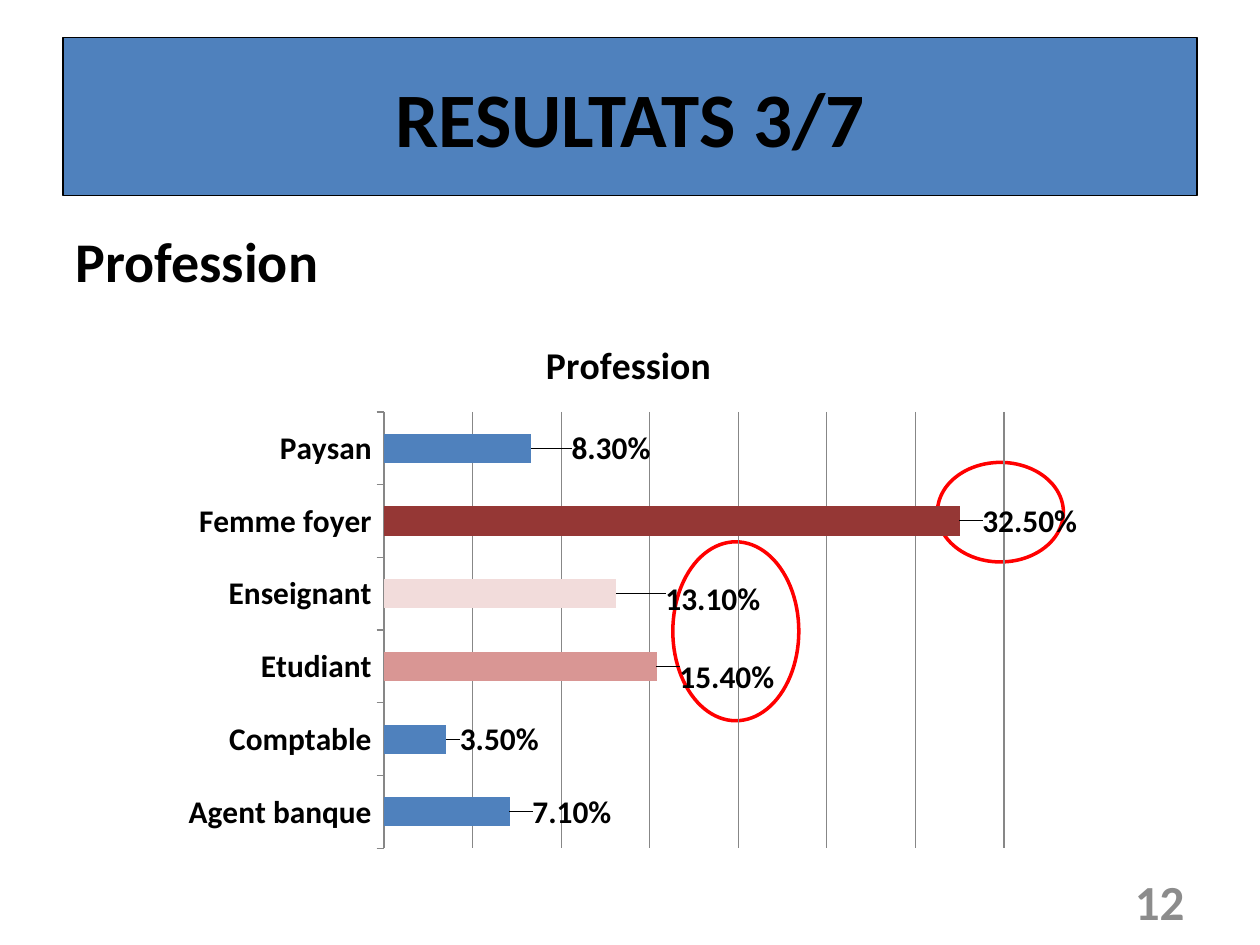
from lxml.etree import SubElement
from pptx import Presentation
from pptx.chart.data import CategoryChartData
from pptx.dml.color import RGBColor
from pptx.enum.chart import XL_CHART_TYPE, XL_LABEL_POSITION, XL_TICK_LABEL_POSITION, XL_TICK_MARK
from pptx.enum.shapes import MSO_SHAPE
from pptx.enum.text import MSO_ANCHOR, PP_ALIGN
from pptx.oxml import parse_xml
from pptx.oxml.ns import nsdecls, qn
from pptx.util import Inches, Pt

WIDE, HIGH = 10, 7.5
FACE = "Calibri"
BLACK = RGBColor(0x00, 0x00, 0x00)
WHITE = RGBColor(0xFF, 0xFF, 0xFF)
BLUE = RGBColor(0x4F, 0x81, 0xBD)
RED = RGBColor(0xFF, 0x00, 0x00)
GRAY = RGBColor(0x8C, 0x8C, 0x8C)
RULE = RGBColor(0x87, 0x87, 0x87)
ROSE = RGBColor(0xD9, 0x96, 0x94)
PALE = RGBColor(0xF2, 0xDC, 0xDB)
WINE = RGBColor(0x95, 0x37, 0x35)

# Job, share, bar colour, label shift as shares of the chart
JOBS = [
    ("Agent banque", 0.071, BLUE, 0.02, 0),
    ("Comptable", 0.035, BLUE, 0.01, 0),
    ("Etudiant", 0.154, ROSE, 0.02, 0.02),
    ("Enseignant", 0.131, PALE, 0.05, 0.01),
    ("Femme foyer", 0.325, WINE, 0.02, 0),
    ("Paysan", 0.083, BLUE, 0.04, 0),
]


def style(font, size, color=BLACK):
    font.name, font.size, font.bold = FACE, Pt(size), True
    font.color.rgb = color


def place(shape, box):
    shape.left, shape.top, shape.width, shape.height = map(Inches, box)


def write(frame, text, size, color, align, anchor):
    frame.text = text
    frame.word_wrap = True
    frame.vertical_anchor = anchor
    line = frame.paragraphs[0]
    line.alignment = align
    style(line.font, size, color)


def add_ring(slide, box):
    ring = slide.shapes.add_shape(MSO_SHAPE.OVAL, *map(Inches, box))
    ring.shadow.inherit = False
    ring.fill.solid()
    ring.fill.fore_color.rgb = WHITE
    ring.line.color.rgb = RED
    ring.line.width = Pt(2)
    # Rings lie behind the title
    slide.shapes.title.element.addprevious(ring.element)


def add_title(slide, box):
    title = slide.shapes.title
    place(title, box)
    title.fill.solid()
    title.fill.fore_color.rgb = BLUE
    title.line.color.rgb = BLACK
    title.line.width = Pt(0.75)
    write(title.text_frame, "RESULTATS 3/7", 44, BLACK, PP_ALIGN.CENTER, MSO_ANCHOR.MIDDLE)


def add_text(slide, box, text, size, color, align, anchor):
    area = slide.shapes.add_textbox(*map(Inches, box))
    write(area.text_frame, text, size, color, align, anchor)


def set_layout(node, **parts):
    inner = SubElement(node, qn("c:manualLayout"))
    for key, val in parts.items():
        SubElement(inner, qn("c:" + key)).set("val", str(val))


def add_chart(slide, box):
    data = CategoryChartData(number_format="0.00%")
    data.categories = [job[0] for job in JOBS]
    data.add_series("Profession", [job[1] for job in JOBS])
    chart = slide.shapes.add_chart(XL_CHART_TYPE.BAR_CLUSTERED, *map(Inches, box), data).chart
    chart.has_legend = False
    chart.font.name, chart.font.size = FACE, Pt(18)
    chart.font.color.rgb = BLACK
    chart.has_title = True
    head = chart.chart_title.text_frame
    head.text = "Profession"
    style(head.paragraphs[0].font, 21.6)

    # Axes
    cats, vals = chart.category_axis, chart.value_axis
    style(cats.tick_labels.font, 18)
    cats.major_tick_mark = XL_TICK_MARK.OUTSIDE
    cats.tick_label_position = XL_TICK_LABEL_POSITION.NEXT_TO_AXIS
    cats.format.line.color.rgb = RULE
    vals.minimum_scale, vals.maximum_scale, vals.major_unit = 0, 0.35, 0.05
    vals.has_major_gridlines = True
    vals.major_gridlines.format.line.color.rgb = RULE
    vals.visible = False

    # Bars and their shifted labels
    plot = chart.plots[0]
    plot.gap_width = 150
    plot.vary_by_categories = False
    plot.has_data_labels = True
    tags = plot.data_labels
    tags.show_value = True
    tags.number_format, tags.number_format_is_linked = "0.00%", False
    style(tags.font, 18)
    bars = plot.series[0]
    bars.format.fill.solid()
    bars.format.fill.fore_color.rgb = BLUE
    for i, (_, _, color, dx, dy) in enumerate(JOBS):
        point = bars.points[i]
        if color != BLUE:
            point.format.fill.solid()
            point.format.fill.fore_color.rgb = color
        style(point.data_label.font, 18)
        point.data_label.position = XL_LABEL_POSITION.OUTSIDE_END
    space = f"<c:layout {nsdecls('c')}/>"
    for node, job in zip(bars.data_labels._element.findall(qn("c:dLbl")), JOBS):
        shift = parse_xml(space)
        set_layout(shift, x=job[3], y=job[4])
        node.find(qn("c:idx")).addnext(shift)

    # Plot area
    area = plot._element.getparent()
    for old in area.findall(qn("c:layout")):
        area.remove(old)
    inner = parse_xml(space)
    set_layout(inner, layoutTarget="inner", xMode="edge", yMode="edge",
               x=0.225, y=0.18, w=0.697, h=0.8)
    area.insert(0, inner)


def main():
    deck = Presentation()
    deck.slide_width, deck.slide_height = Inches(WIDE), Inches(HIGH)
    slide = deck.slides.add_slide(deck.slide_layouts[5])
    edge, span = 0.05 * WIDE, 0.9 * WIDE
    add_ring(slide, (5.34, 4.3, 1, 1.42))
    add_ring(slide, (7.44, 3.67, 1, 0.79))
    add_title(slide, (edge, 0.04 * HIGH, span, HIGH / 6))
    add_text(slide, (edge, 1.75, span, 0.66 * HIGH), "Profession", 32, BLACK,
             PP_ALIGN.LEFT, MSO_ANCHOR.TOP)
    add_chart(slide, (1.46, 2.49, 7.09, 4.33))
    add_text(slide, (7.17, 6.95, 2.33, 0.4), "12", 28, GRAY,
             PP_ALIGN.RIGHT, MSO_ANCHOR.MIDDLE)
    deck.save("out.pptx")


if __name__ == "__main__":
    main()
